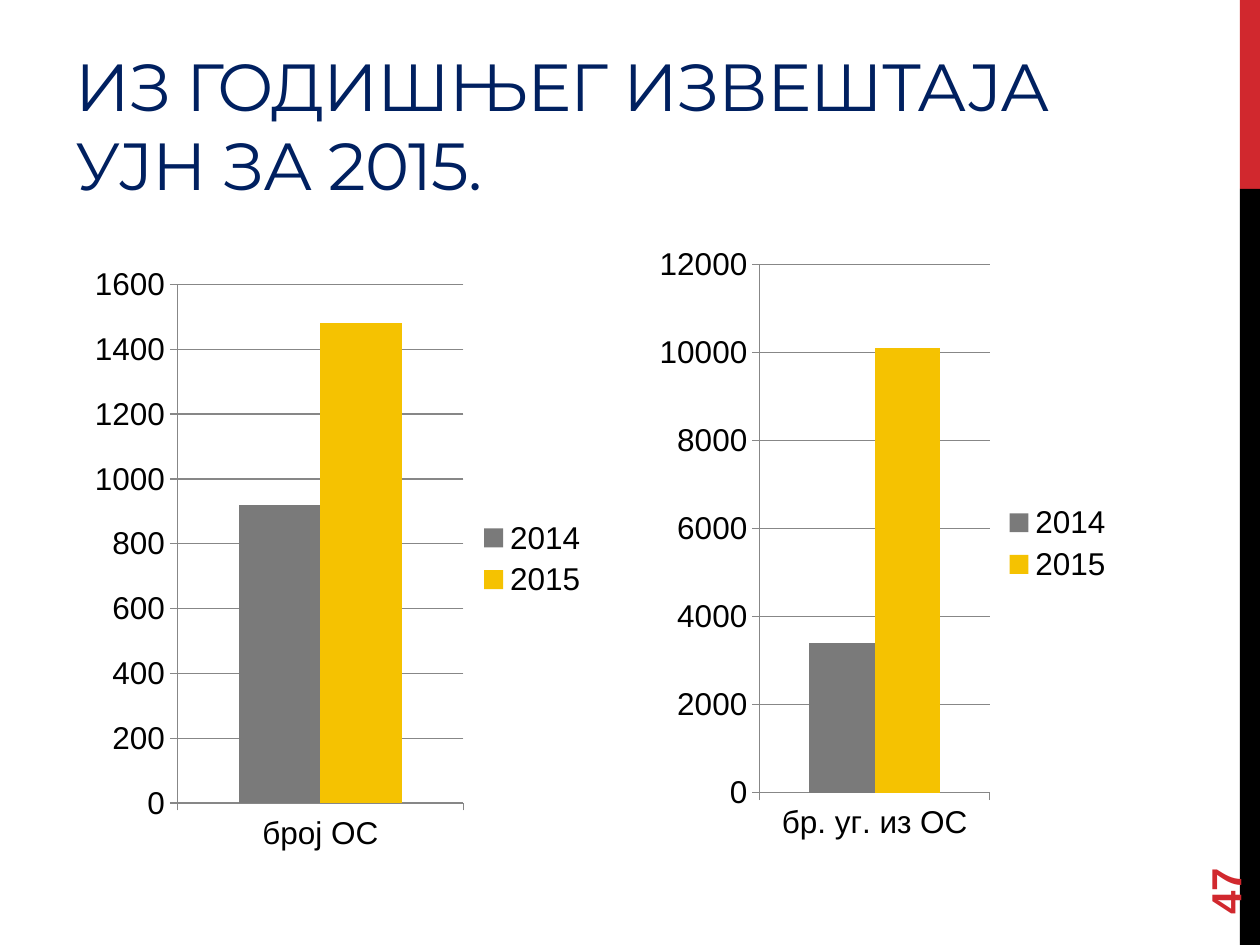
from pptx import Presentation
from pptx.chart.data import CategoryChartData
from pptx.dml.color import RGBColor
from pptx.enum.chart import XL_CHART_TYPE, XL_LEGEND_POSITION, XL_TICK_MARK
from pptx.enum.shapes import MSO_SHAPE
from pptx.enum.text import MSO_ANCHOR, PP_ALIGN
from pptx.util import Inches, Pt

COLORS = {
    "red": "D1282E",
    "black": "000000",
    "navy": "002060",
    "gray": "7A7A7A",
    "yellow": "F5C201",
    "grid": "878787",
}


class SlideBuilder:
    chart_font = "Arial"
    chart_size = 18

    def __init__(self, page):
        self.page = page

    def color(self, name):
        return RGBColor.from_string(COLORS[name])

    def bounds(self, at):
        return [Inches(length) for length in at]

    def bar(self, at, fill):
        shape = self.page.shapes.add_shape(MSO_SHAPE.RECTANGLE, *self.bounds(at))
        shape.shadow.inherit = False
        shape.fill.solid()
        shape.fill.fore_color.rgb = self.color(fill)
        shape.line.fill.background()

    def text(self, at, words, font, size, color, anchor, bold=False, rotation=0, spacing=0):
        box = self.page.shapes.add_textbox(*self.bounds(at))
        box.rotation = rotation
        frame = box.text_frame
        frame.word_wrap = True
        frame.vertical_anchor = anchor
        para = frame.paragraphs[0]
        para.alignment = PP_ALIGN.LEFT
        span = para.add_run()
        span.text = words
        span.font.name = font
        span.font.size = Pt(size)
        span.font.bold = bold
        span.font.color.rgb = self.color(color)
        if spacing:
            span._r.get_or_add_rPr().set("spc", str(round(spacing * 100)))

    def column_chart(self, at, category, values, top, step):
        data = CategoryChartData()
        data.categories = [category]
        for name, value in values.items():
            data.add_series(name, [value])
        chart = self.page.shapes.add_chart(
            XL_CHART_TYPE.COLUMN_CLUSTERED, *self.bounds(at), data
        ).chart
        chart.has_title = False
        chart.font.name = self.chart_font
        chart.font.size = Pt(self.chart_size)
        chart.font.color.rgb = self.color("black")
        chart.has_legend = True
        chart.legend.position = XL_LEGEND_POSITION.RIGHT
        chart.legend.include_in_layout = False

        plot = chart.plots[0]
        plot.gap_width = 150
        plot.overlap = 0
        plot.vary_by_categories = False
        for series, fill in zip(plot.series, ("gray", "yellow")):
            series.format.fill.solid()
            series.format.fill.fore_color.rgb = self.color(fill)

        value_axis = chart.value_axis
        value_axis.minimum_scale = 0
        value_axis.maximum_scale = top
        value_axis.major_unit = step
        value_axis.has_major_gridlines = True
        for axis in (chart.category_axis, value_axis):
            axis.major_tick_mark = XL_TICK_MARK.OUTSIDE
            axis.minor_tick_mark = XL_TICK_MARK.NONE
        for part in (chart.category_axis, value_axis, value_axis.major_gridlines):
            part.format.line.color.rgb = self.color("grid")
            part.format.line.width = Pt(0.75)


def main():
    deck = Presentation()
    deck.slide_width = Inches(10)
    deck.slide_height = Inches(7.5)
    builder = SlideBuilder(deck.slides.add_slide(deck.slide_layouts[6]))

    builder.bar((9.84, 0, 0.16, 1.5), "red")
    builder.bar((9.84, 1.5, 0.16, 6), "black")
    builder.text(
        (0.5, 0.17, 8.33, 1.5), "ИЗ ГОДИШЊЕГ ИЗВЕШТАЈА УЈН ЗА 2015.",
        "Montserrat", 38, "navy", MSO_ANCHOR.BOTTOM, spacing=-0.6,
    )
    builder.column_chart(
        (5.16, 1.86, 3.78, 4.91), "бр. уг. из ОС", {"2014": 3400, "2015": 10100}, 12000, 2000
    )
    builder.text(
        (9, 6.44, 1.44, 0.4), "47", "Arial", 24, "red", MSO_ANCHOR.MIDDLE, bold=True, rotation=270
    )
    builder.column_chart(
        (0.67, 2.02, 4.1, 4.83), "број ОС", {"2014": 920, "2015": 1480}, 1600, 200
    )
    deck.save("out.pptx")


if __name__ == "__main__":
    main()
